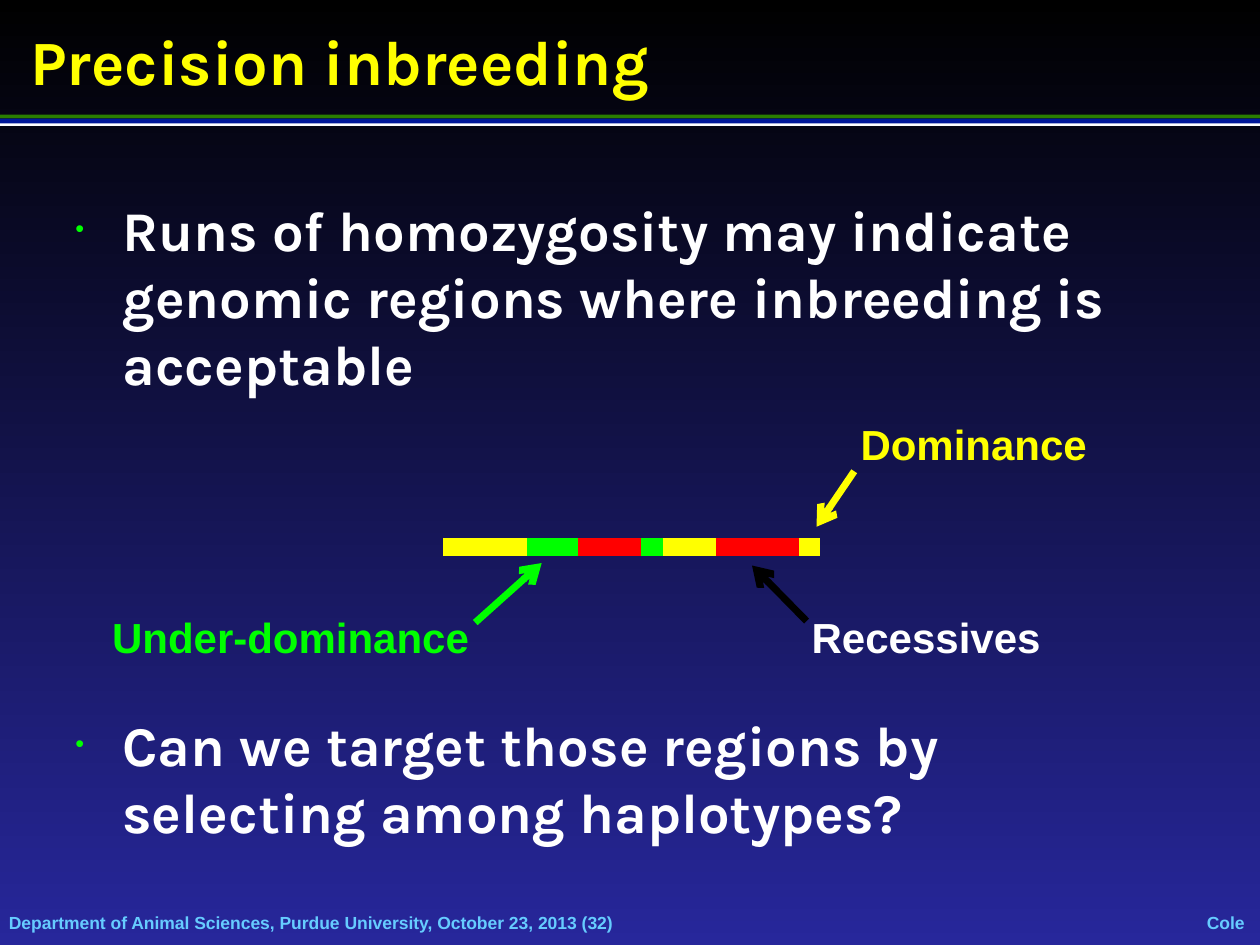
"""Build the slide on precision inbreeding."""
from itertools import pairwise

from lxml.etree import SubElement
from pptx import Presentation
from pptx.dml.color import RGBColor
from pptx.enum.shapes import MSO_CONNECTOR, MSO_SHAPE
from pptx.enum.text import MSO_ANCHOR, PP_ALIGN
from pptx.oxml.ns import qn
from pptx.util import Cm, Pt

BLACK = RGBColor(0x00, 0x00, 0x00)
INDIGO = RGBColor(0x27, 0x27, 0x9B)
WHITE = RGBColor(0xFF, 0xFF, 0xFF)
YELLOW = RGBColor(0xFF, 0xFF, 0x00)
GREEN = RGBColor(0x00, 0xFF, 0x00)
RED = RGBColor(0xFF, 0x00, 0x00)
SKY = RGBColor(0x66, 0xCC, 0xFF)
RULE_GREEN = RGBColor(0x2A, 0x7E, 0x00)
RULE_BLUE = RGBColor(0x00, 0x17, 0x99)

WIDTH, HEIGHT = 25.4, 19.05

TITLE = "Precision inbreeding"
BULLETS = [
    ("Runs of homozygosity may indicate genomic regions where inbreeding is acceptable", 16),
    ("Can we target those regions by selecting among haplotypes?", 179),
]
FOOTERS = [
    ("Department of Animal Sciences, Purdue University, October 23, 2013 (32)",
     (0.18, 18.39, 20.55, 0.43), PP_ALIGN.LEFT),
    ("Cole", (24.23, 18.39, 0.96, 0.43), PP_ALIGN.CENTER),
]
RULES = [(2.31, 0.08, RULE_GREEN), (2.46, 0.08, WHITE), (2.39, 0.1, RULE_BLUE)]
SEGMENT_EDGES = [8.94, 10.62, 11.66, 12.93, 13.36, 14.43, 16.1, 16.54]
SEGMENT_COLORS = [YELLOW, GREEN, RED, GREEN, YELLOW, RED, YELLOW]
SEGMENT_TOP = 11.03
LABELS = [
    ("Dominance", (16.38, 8.31, 6.5, 1.27), YELLOW, PP_ALIGN.CENTER),
    ("Recessives", (15.9, 12.2, 5.54, 1.27), WHITE, PP_ALIGN.CENTER),
    ("Under-dominance", (2.01, 12.2, 8.26, 1.27), GREEN, PP_ALIGN.LEFT),
]
ARROWS = [
    ((16.26, 12.52, 15.16, 11.4), BLACK),
    ((9.58, 12.55, 10.92, 11.35), GREEN),
    ((17.22, 9.5, 16.46, 10.62), YELLOW),
]

TITLE_FONT = {"name": "Karla", "size": Pt(36), "bold": True}
BODY_FONT = {"name": "Karla", "size": Pt(32), "bold": True}
LABEL_FONT = {"name": "Arial", "size": Pt(24), "bold": True}
FOOTER_FONT = {"name": "Arial", "size": Pt(10), "bold": True}
MIDDLE = {"vertical_anchor": MSO_ANCHOR.MIDDLE}
TIGHT = MIDDLE | dict.fromkeys(
    ("margin_left", "margin_top", "margin_right", "margin_bottom"), 0)


def apply(target, values):
    for name, value in values.items():
        setattr(target, name, value)


def add_frame(slide, box, values):
    frame = slide.shapes.add_textbox(*map(Cm, box)).text_frame
    apply(frame, {"word_wrap": True} | values)
    return frame


def write(paragraph, text, font, color, alignment=PP_ALIGN.LEFT):
    paragraph.alignment = alignment
    run = paragraph.add_run()
    run.text = text
    apply(run.font, font)
    run.font.color.rgb = color


def add_bullet(paragraph):
    properties = paragraph._p.get_or_add_pPr()
    properties.set("marL", str(Cm(0.95)))
    properties.set("indent", str(Cm(-0.95)))
    color = SubElement(properties, qn("a:buClr"))
    SubElement(color, qn("a:srgbClr"), val=str(GREEN))
    SubElement(properties, qn("a:buSzPct"), val="45000")
    SubElement(properties, qn("a:buFont"), typeface="Arial")
    SubElement(properties, qn("a:buChar"), char="•")


def add_line(slide, ends, color, width, arrow=False):
    connector = slide.shapes.add_connector(MSO_CONNECTOR.STRAIGHT, *map(Cm, ends))
    connector.line.color.rgb = color
    connector.line.width = Pt(width)
    if arrow:
        SubElement(connector.line._get_or_add_ln(), qn("a:tailEnd"), type="arrow")
    SubElement(connector._element.spPr, qn("a:effectLst"))


def add_background(slide):
    fill = slide.background.fill
    fill.gradient()
    fill.gradient_angle = 270
    for stop, color in zip(fill.gradient_stops, (BLACK, INDIGO)):
        stop.color.rgb = color


def main():
    presentation = Presentation()
    apply(presentation, {"slide_width": Cm(WIDTH), "slide_height": Cm(HEIGHT)})
    slide = presentation.slides.add_slide(presentation.slide_layouts[6])
    add_background(slide)

    for text, box, alignment in FOOTERS:
        frame = add_frame(slide, box, TIGHT)
        write(frame.paragraphs[0], text, FOOTER_FONT, SKY, alignment)

    for top, height, color in RULES:
        rule = slide.shapes.add_shape(
            MSO_SHAPE.RECTANGLE, 0, Cm(top), Cm(WIDTH), Cm(height))
        rule.shadow.inherit = False
        rule.fill.solid()
        rule.fill.fore_color.rgb = color
        rule.line.fill.background()

    title = add_frame(slide, (0.36, 0.41, 22.86, 1.63), MIDDLE)
    write(title.paragraphs[0], TITLE, TITLE_FONT, YELLOW)

    body = add_frame(slide, (1.27, 3.81, 22.86, 13.69), {})
    for index, (text, space) in enumerate(BULLETS):
        paragraph = body.add_paragraph() if index else body.paragraphs[0]
        paragraph.space_before = Pt(space)
        write(paragraph, text, BODY_FONT, WHITE)
        add_bullet(paragraph)

    for (left, right), color in zip(pairwise(SEGMENT_EDGES), SEGMENT_COLORS):
        add_line(slide, (left, SEGMENT_TOP, right, SEGMENT_TOP), color, 10)

    for text, box, color, alignment in LABELS:
        frame = add_frame(slide, box, {})
        write(frame.paragraphs[0], text, LABEL_FONT, color, alignment)

    for ends, color in ARROWS:
        add_line(slide, ends, color, 4, arrow=True)

    presentation.save("out.pptx")


if __name__ == "__main__":
    main()
